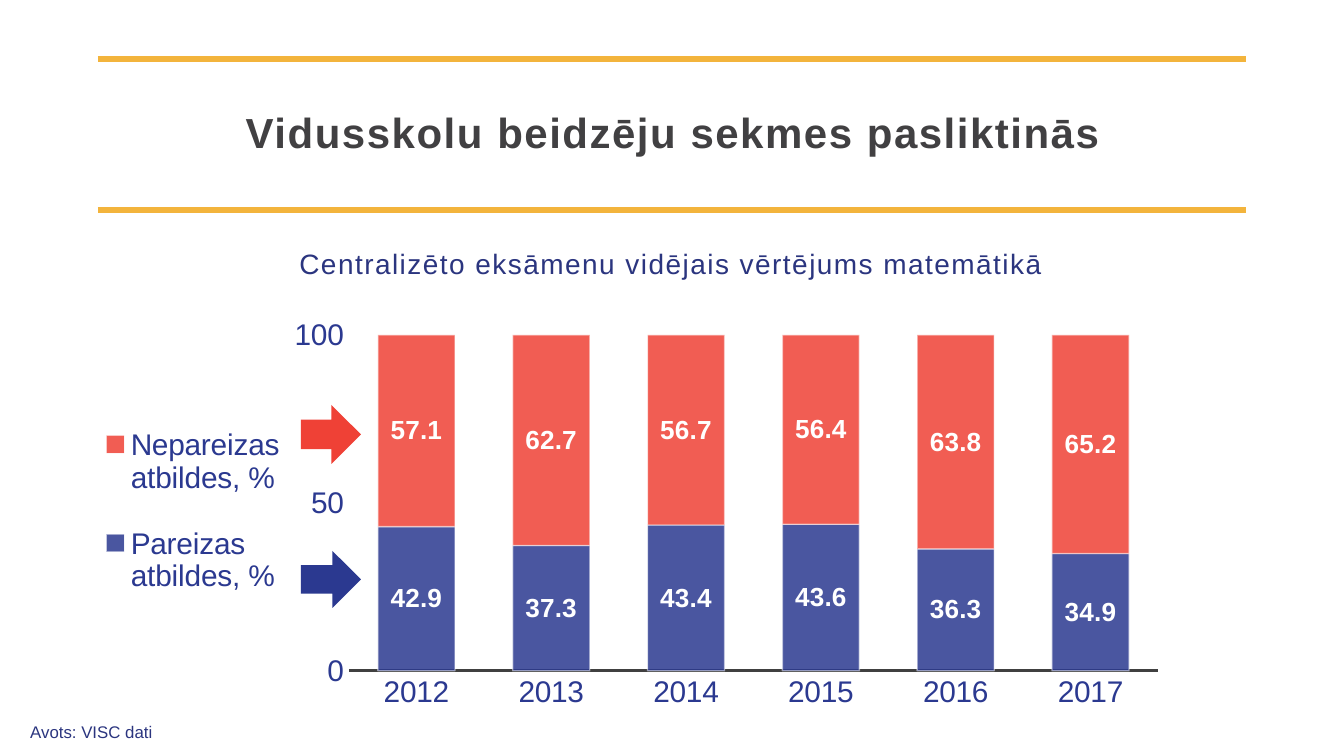
from lxml import etree
from pptx import Presentation
from pptx.chart.data import CategoryChartData
from pptx.dml.color import RGBColor
from pptx.enum.chart import (XL_CHART_TYPE as CT, XL_LABEL_POSITION as LP,
                             XL_LEGEND_POSITION as LG, XL_TICK_MARK as TM)
from pptx.enum.shapes import MSO_CONNECTOR as MC, MSO_SHAPE as MS
from pptx.enum.text import MSO_ANCHOR as MA, MSO_AUTO_SIZE as AS, PP_ALIGN as PA
from pptx.oxml.ns import qn
from pptx.util import Emu, Pt

PX = 914400 / 134.4
NAVY, INK, RED, GOLD = "2B3990", "2B357F", "EF4136", "F3B43C"
GREY, AXIS, WHITE = "414042", "404040", "FFFFFF"
PLOT_BOX = (349, 335, 809, 336)
LEGEND_BOX = (98, 395, 190, 232)


def px(*values):
    return [Emu(round(v * PX)) for v in values]


def rgb(color):
    return RGBColor.from_string(color)


def apply(target, values):
    for name, value in values.items():
        setattr(target, name, value)


class Deck:
    font = "Arial"

    def __init__(self, width, height):
        self.prs = Presentation()
        apply(self.prs, dict(zip(("slide_width", "slide_height"), px(width, height))))
        self.slide = self.prs.slides.add_slide(self.prs.slide_layouts[5])

    def set_font(self, font, size, color, bold=False):
        apply(font, {"name": self.font, "size": Pt(size), "bold": bold})
        font.color.rgb = rgb(color)

    def fill_text(self, sp, text, size, color, bold=False, spc=0, frame={}, para={}):
        tf = sp.text_frame
        apply(tf, {"word_wrap": True, "auto_size": AS.NONE, **frame})
        p = tf.paragraphs[0]
        apply(p, para)
        r = p.add_run()
        r.text = text
        self.set_font(r.font, size, color, bold)
        if spc:
            r._r.get_or_add_rPr().set("spc", str(spc))

    def title(self, box, text, **style):
        sp = self.slide.shapes.title
        apply(sp, dict(zip(("left", "top", "width", "height"), px(*box))))
        self.fill_text(sp, text, **style)

    def text(self, box, text, **style):
        self.fill_text(self.slide.shapes.add_textbox(*px(*box)), text, **style)

    def rule(self, x1, x2, y, color, width):
        sp = self.slide.shapes.add_connector(MC.STRAIGHT, *px(x1, y, x2, y))
        sp.line.color.rgb = rgb(color)
        sp.line.width = Pt(width)
        etree.SubElement(sp._element.spPr, qn("a:effectLst"))

    def arrow(self, box, color):
        sp = self.slide.shapes.add_shape(MS.RIGHT_ARROW, *px(*box))
        sp.shadow.inherit = False
        sp.fill.solid()
        sp.fill.fore_color.rgb = rgb(color)
        sp.line.fill.background()

    def layout(self, box, area, inner=False):
        node = etree.Element(qn("c:layout"))
        manual = etree.SubElement(node, qn("c:manualLayout"))
        x, y, w, h = area
        left, top, width, height = box
        values = {"layoutTarget": "inner"} if inner else {}
        values |= {"xMode": "edge", "yMode": "edge",
                   "x": (x - left) / width, "y": (y - top) / height,
                   "w": w / width, "h": h / height}
        for tag, value in values.items():
            etree.SubElement(manual, qn("c:" + tag)).set("val", str(value))
        return node

    def chart(self, box, cats, series):
        data = CategoryChartData(number_format="#,##0.0")
        data.categories = cats
        for name, values, color in series:
            data.add_series(name, values)
        chart = self.slide.shapes.add_chart(CT.COLUMN_STACKED, *px(*box), data).chart
        apply(chart, {"has_title": False, "has_legend": True})
        self.set_font(chart.font, 16, NAVY)
        plot = chart.plots[0]
        apply(plot, {"gap_width": 75, "overlap": 100, "vary_by_categories": False})
        for s, (name, values, color) in zip(plot.series, series):
            self.style_series(s, color)
        for axis in (chart.category_axis, chart.value_axis):
            apply(axis, {"major_tick_mark": TM.NONE, "minor_tick_mark": TM.NONE,
                         "has_major_gridlines": False})
            self.set_font(axis.tick_labels.font, 16, NAVY)
        line = chart.category_axis.format.line
        line.color.rgb = rgb(AXIS)
        line.width = Pt(1.5)
        axis = chart.value_axis
        apply(axis, {"minimum_scale": 0, "maximum_scale": 100, "major_unit": 50})
        apply(axis.tick_labels, {"number_format": "0", "number_format_is_linked": False})
        axis.format.line.fill.background()
        legend = chart.legend
        apply(legend, {"position": LG.LEFT, "include_in_layout": False})
        self.set_font(legend.font, 16, NAVY)
        root = chart._chartSpace
        for old in root.xpath(".//c:plotArea/c:layout | .//c:legend/c:layout"):
            old.getparent().remove(old)
        root.xpath(".//c:plotArea")[0].insert(0, self.layout(box, PLOT_BOX, True))
        root.xpath(".//c:legendPos")[0].addnext(self.layout(box, LEGEND_BOX))

    def style_series(self, s, color):
        fmt = s.format
        fmt.fill.solid()
        fmt.fill.fore_color.rgb = rgb(color)
        fmt.line.color.rgb = rgb(WHITE)
        fmt.line.width = Pt(0.75)
        for node, alpha in zip(s._element.xpath("./c:spPr//a:srgbClr"), (85, 50)):
            etree.SubElement(node, qn("a:alpha")).set("val", str(alpha * 1000))
        labels = s.data_labels
        apply(labels, {"show_value": True, "number_format": "#,##0.0",
                       "number_format_is_linked": False, "position": LP.CENTER})
        self.set_font(labels.font, 14, WHITE, True)


def main():
    deck = Deck(1344, 756)
    for y in (59, 210):
        deck.rule(98, 1246, y, GOLD, 3)
    deck.title((99, 59, 1148, 151), "Vidusskolu beidzēju sekmes pasliktinās",
               size=22.5, color=GREY, bold=True, spc=80,
               frame={"vertical_anchor": MA.MIDDLE},
               para={"alignment": PA.CENTER, "line_spacing": 0.9})
    deck.chart((69, 310, 1111, 406), [str(year) for year in range(2012, 2018)], [
        ("Pareizas atbildes, %", (42.9, 37.3, 43.4, 43.6, 36.3, 34.9), NAVY),
        ("Nepareizas atbildes, %", (57.1, 62.7, 56.7, 56.4, 63.8, 65.2), RED),
    ])
    deck.arrow((301, 405, 60, 59), RED)
    deck.arrow((301, 551, 60, 57), NAVY)
    side, edge = px(10, 5)
    deck.text((263, 242, 816, 42), "Centralizēto eksāmenu vidējais vērtējums matemātikā",
              size=15, color=INK, spc=80,
              frame={"margin_left": side, "margin_right": side,
                     "margin_top": edge, "margin_bottom": edge},
              para={"alignment": PA.CENTER, "space_before": Pt(10)})
    deck.text((17, 726, 419, 35), "Avots: VISC dati", size=9, color=INK,
              para={"line_spacing": Pt(5.2), "space_before": Pt(10)})
    deck.prs.save("out.pptx")


if __name__ == "__main__":
    main()
